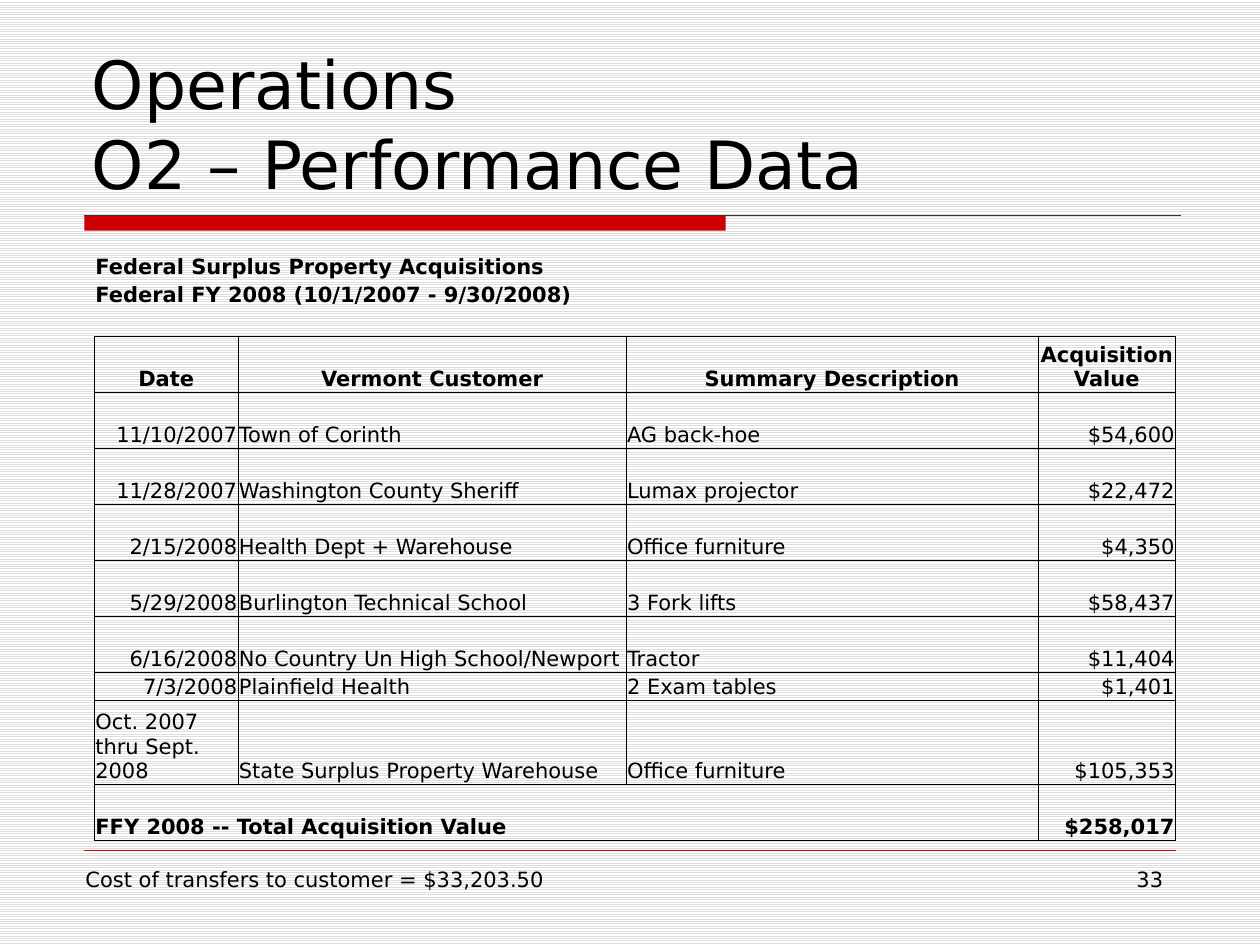
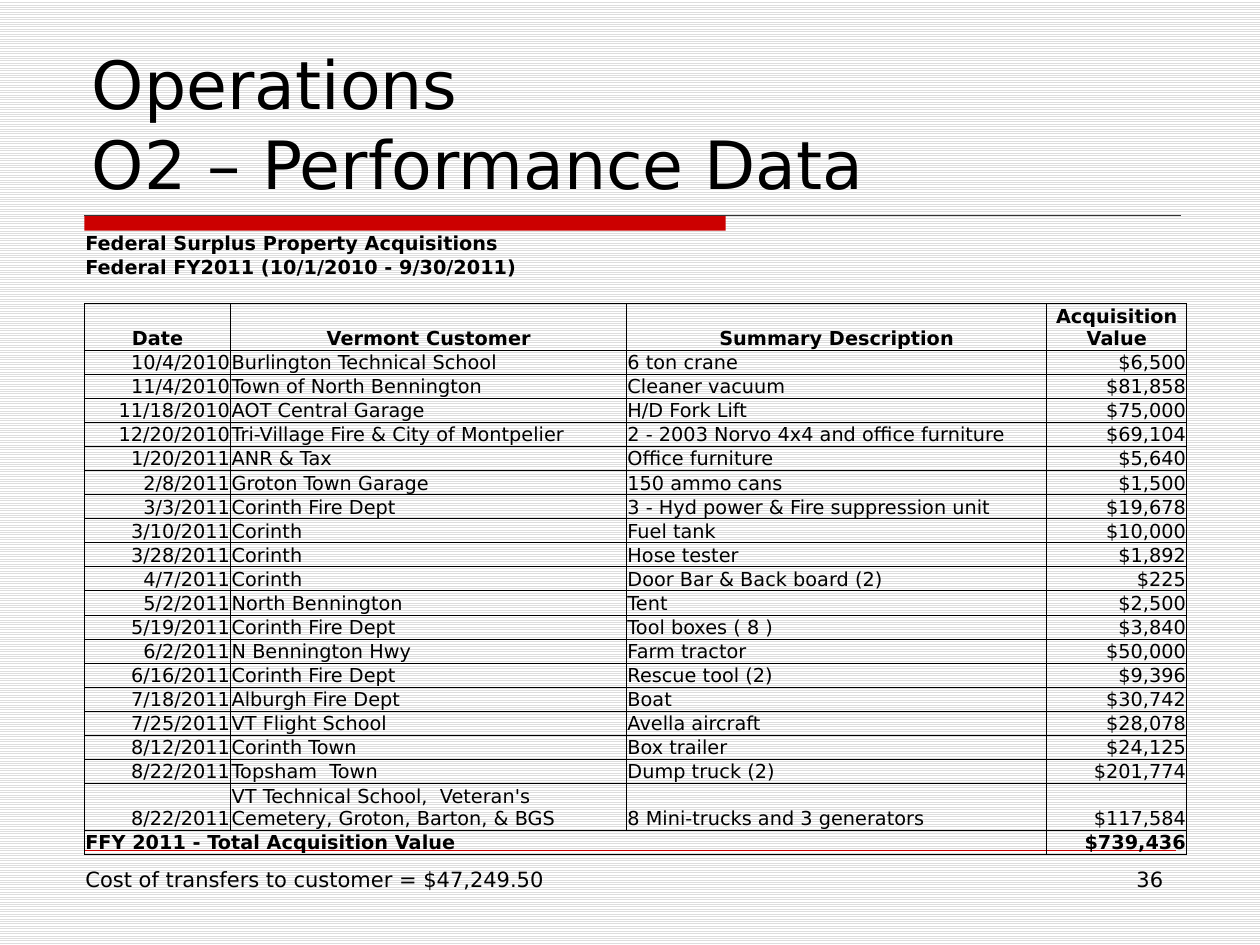
from pptx import Presentation
from pptx.dml.color import RGBColor
from pptx.enum.dml import MSO_PATTERN
from pptx.enum.shapes import MSO_CONNECTOR as CONNECTOR, MSO_SHAPE as SHAPE
from pptx.enum.text import MSO_ANCHOR as ANCHOR, MSO_AUTO_SIZE as AUTO_SIZE, PP_ALIGN as ALIGN
from pptx.oxml import parse_xml
from pptx.oxml.ns import nsdecls, qn
from pptx.util import Inches, Pt
from lxml.etree import SubElement

FONT = "DejaVu Sans"
BLACK = RGBColor(0x00, 0x00, 0x00)
WHITE = RGBColor(0xFF, 0xFF, 0xFF)
STRIPE = RGBColor(0xDD, 0xDD, 0xDD)
RULE = RGBColor(0x33, 0x33, 0x33)
RED = RGBColor(0xCC, 0x00, 0x00)
PLAIN_STYLE = "{2D5ABB26-0587-4C30-8999-92F81FD0307C}"
CELL_MARGIN = Pt(0.5)
TITLE = "Operations\vO2 – Performance Data"
HEADINGS = ("Date", "Vermont Customer", "Summary Description", "Acquisition Value")
COLUMN_SHARES = (1.14, 3.08, 3.27, 1.09)

FY2008 = [
    ("11/10/2007", "Town of Corinth", "AG back-hoe", "$54,600"),
    ("11/28/2007", "Washington County Sheriff", "Lumax projector", "$22,472"),
    ("2/15/2008", "Health Dept + Warehouse", "Office furniture", "$4,350"),
    ("5/29/2008", "Burlington Technical School", "3 Fork lifts", "$58,437"),
    ("6/16/2008", "No Country Un High School/Newport", "Tractor", "$11,404"),
    ("7/3/2008", "Plainfield Health", "2 Exam tables", "$1,401"),
    ("Oct. 2007 thru Sept. 2008", "State Surplus Property Warehouse", "Office furniture", "$105,353"),
    ("FFY 2008 -- Total Acquisition Value", "", "", "$258,017"),
]
FY2011 = [
    ("10/4/2010", "Burlington Technical School", "6 ton crane", "$6,500"),
    ("11/4/2010", "Town of North Bennington", "Cleaner vacuum", "$81,858"),
    ("11/18/2010", "AOT Central Garage", "H/D Fork Lift", "$75,000"),
    ("12/20/2010", "Tri-Village Fire & City of Montpelier", "2 - 2003 Norvo 4x4 and office furniture", "$69,104"),
    ("1/20/2011", "ANR & Tax", "Office furniture", "$5,640"),
    ("2/8/2011", "Groton Town Garage", "150 ammo cans", "$1,500"),
    ("3/3/2011", "Corinth Fire Dept", "3 - Hyd power & Fire suppression unit", "$19,678"),
    ("3/10/2011", "Corinth", "Fuel tank", "$10,000"),
    ("3/28/2011", "Corinth", "Hose tester", "$1,892"),
    ("4/7/2011", "Corinth", "Door Bar & Back board (2)", "$225"),
    ("5/2/2011", "North Bennington", "Tent", "$2,500"),
    ("5/19/2011", "Corinth Fire Dept", "Tool boxes ( 8 )", "$3,840"),
    ("6/2/2011", "N Bennington Hwy", "Farm tractor", "$50,000"),
    ("6/16/2011", "Corinth Fire Dept", "Rescue tool (2)", "$9,396"),
    ("7/18/2011", "Alburgh Fire Dept", "Boat", "$30,742"),
    ("7/25/2011", "VT Flight School", "Avella aircraft", "$28,078"),
    ("8/12/2011", "Corinth Town", "Box trailer", "$24,125"),
    ("8/22/2011", "Topsham  Town", "Dump truck (2)", "$201,774"),
    ("8/22/2011", "VT Technical School,  Veteran's Cemetery, Groton, Barton, & BGS",
     "8 Mini-trucks and 3 generators", "$117,584"),
    ("FFY 2011 - Total Acquisition Value", "", "", "$739,436"),
]


def write(frame, text, size, align=ALIGN.LEFT, bold=False):
    frame.text = text
    for paragraph in frame.paragraphs:
        paragraph.alignment = align
        for run in paragraph.runs:
            run.font.name, run.font.size, run.font.bold = FONT, Pt(size), bold
            run.font.color.rgb = BLACK


def add_rule(slide, left, top, right, color, weight):
    rule = slide.shapes.add_connector(
        CONNECTOR.STRAIGHT, Inches(left), Inches(top), Inches(right), Inches(top))
    rule.line.color.rgb = color
    rule.line.width = Pt(weight)
    SubElement(rule._element.spPr, qn("a:effectLst"))
    return rule


def add_label(slide, box, text, align=ALIGN.LEFT):
    label = slide.shapes.add_textbox(*map(Inches, box))
    label.text_frame.word_wrap = True
    write(label.text_frame, text, 12, align)


def add_title(slide, box):
    title = slide.shapes.title
    title.left, title.top, title.width, title.height = map(Inches, box)
    frame = title.text_frame
    write(frame, TITLE, 38)
    frame.vertical_anchor = ANCHOR.BOTTOM
    frame.auto_size = AUTO_SIZE.NONE


def add_title_band(slide, left, top, width):
    band = slide.shapes.add_shape(
        SHAPE.RECTANGLE, Inches(left), Inches(top), Inches(5.09), Inches(0.12))
    band.shadow.inherit = False
    band.fill.solid()
    band.fill.fore_color.rgb = RED
    band.line.fill.background()
    return band, add_rule(slide, left, top, left + width, RULE, 0.75)


def share_on_layout(layout, shapes):
    for number, shape in enumerate(shapes, 101):
        shape._element.xpath(".//p:cNvPr")[0].set("id", str(number))
        layout.shapes._spTree.append(shape._element)


def add_footer(slide, left, top, right, cost, number):
    add_label(slide, (right - 2.17, top, 2.17, 0.52), number, ALIGN.RIGHT)
    add_label(slide, (left, top, 8.17, 0.3), f"Cost of transfers to customer = {cost}")


def set_borders(cell):
    properties = cell._tc.get_or_add_tcPr()
    for place, side in enumerate("LRTB"):
        properties.insert(place, parse_xml(
            f'<a:ln{side} {nsdecls("a")} w="{Pt(0.5)}"><a:solidFill>'
            f'<a:srgbClr val="{BLACK}"/></a:solidFill></a:ln{side}>'))


def format_cell(cell, text, size, align, bold):
    write(cell.text_frame, text, size, align, bold)
    cell.fill.background()
    cell.vertical_anchor = ANCHOR.BOTTOM
    cell.margin_left = cell.margin_right = cell.margin_top = CELL_MARGIN
    cell.margin_bottom = 0
    if not text:
        SubElement(cell.text_frame.paragraphs[0]._p, qn("a:endParaRPr"), sz=str(size * 100))


def cell_align(row, column, text):
    if row < 3:
        return ALIGN.LEFT
    if row == 3:
        return ALIGN.CENTER
    is_date = column == 0 and text[0].isdigit()
    return ALIGN.RIGHT if is_date or column == 3 else ALIGN.LEFT


def add_acquisitions(slide, box, period, records, heights, size):
    captions = [("Federal Surplus Property Acquisitions", "", "", ""),
                (period, "", "", ""), ("",) * 4]
    rows = captions + [HEADINGS] + records
    left, top, width, height = box
    table = slide.shapes.add_table(len(rows), len(HEADINGS), *map(Inches, box)).table
    table.first_row = table.horz_banding = False
    table._tbl.tblPr[0].text = PLAIN_STYLE
    for column, share in zip(table.columns, COLUMN_SHARES):
        column.width = Inches(width * share / sum(COLUMN_SHARES))
    for row, share in zip(table.rows, heights):
        row.height = Inches(height * share / sum(heights))
    last = len(rows) - 1
    for r, texts in enumerate(rows):
        for c, text in enumerate(texts):
            cell = table.cell(r, c)
            format_cell(cell, text, size, cell_align(r, c, text), r <= 3 or r == last)
            if r >= 3:
                set_borders(cell)
    for row, end in ((0, 3), (1, 3), (last, 2)):
        table.cell(row, 0).merge(table.cell(row, end))


def add_performance_slide(prs, number, cost, **acquisitions):
    slide = prs.slides.add_slide(prs.slide_layouts[5])
    add_title(slide, (0.63, 0.33, 8.75, 1.33))
    add_acquisitions(slide, **acquisitions)
    add_footer(slide, 0.58, 6.83, 9.33, cost, number)
    return slide


def main():
    prs = Presentation()
    prs.slide_width, prs.slide_height = Inches(10), Inches(7.5)
    backdrop = prs.slide_master.background.fill
    backdrop.patterned()
    backdrop.pattern = MSO_PATTERN.LIGHT_HORIZONTAL
    backdrop.fore_color.rgb, backdrop.back_color.rgb = STRIPE, WHITE
    first = add_performance_slide(
        prs, "33", "$33,203.50", box=(0.75, 2, 8.58, 4.67),
        period="Federal FY 2008 (10/1/2007 - 9/30/2008)", records=FY2008,
        heights=[1] * 3 + [2] * 6 + [1, 3, 2], size=12)
    add_performance_slide(
        prs, "36", "$47,249.50", box=(0.67, 1.83, 8.75, 4.95),
        period="Federal FY2011 (10/1/2010 - 9/30/2011)", records=FY2011,
        heights=[1] * 3 + [1.95] + [1] * 18 + [1.95, 1], size=11)
    share_on_layout(first.slide_layout, [
        *add_title_band(first, 0.67, 1.71, 8.7),
        add_rule(first, 0.67, 6.75, 9.33, RED, 0.25)])
    prs.save("out.pptx")


if __name__ == "__main__":
    main()
